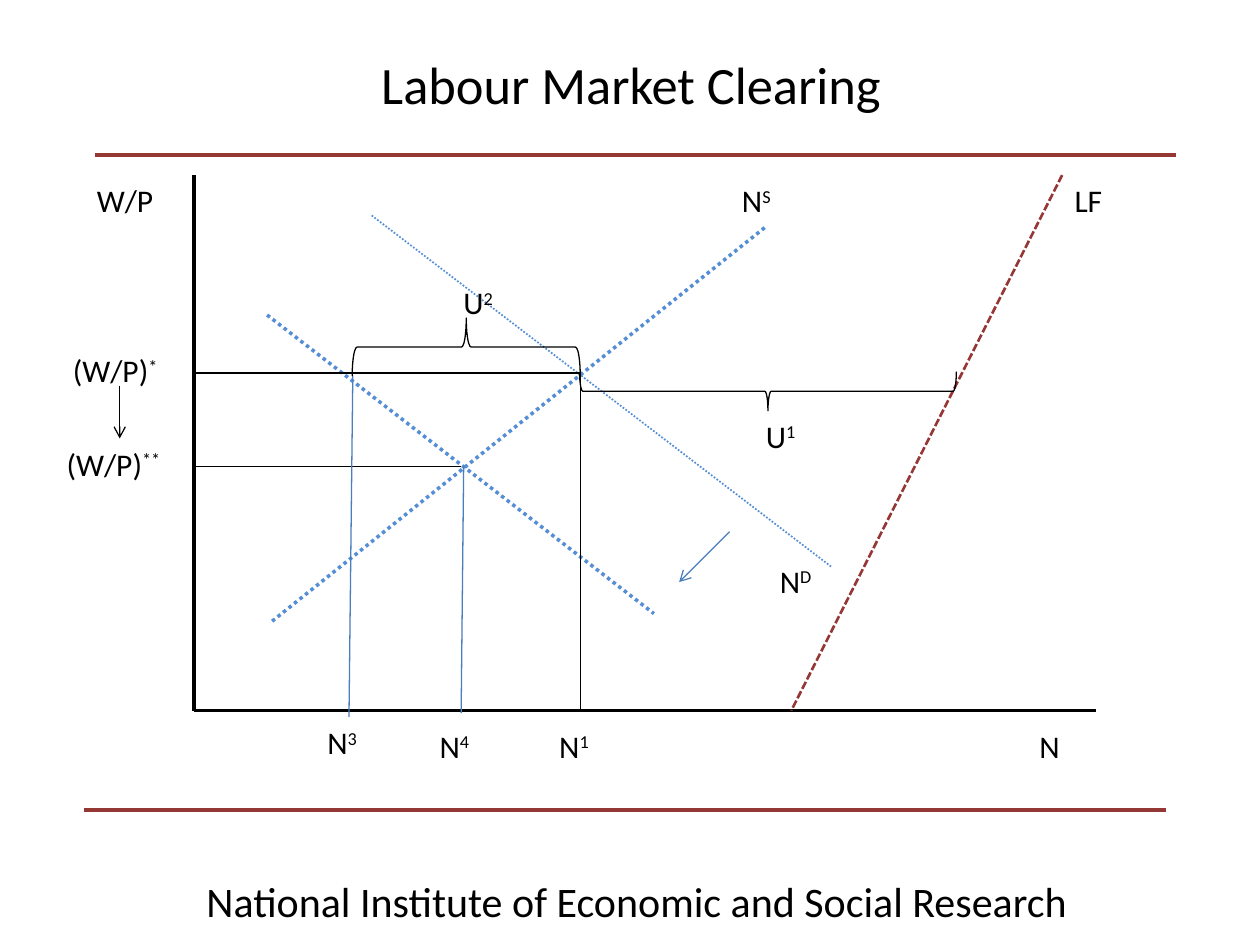
from typing import NamedTuple

import lxml.etree
import pptx
import pptx.dml.color
import pptx.enum.dml
import pptx.enum.shapes
import pptx.enum.text
import pptx.oxml.ns
import pptx.util

PX = pptx.util.Inches(1) // 100
FONT = "Calibri"
BLACK, MAROON, SKY, BLUE = "000000", "953735", "558ED5", "4B7EBC"
DOTTED = pptx.enum.dml.MSO_LINE.ROUND_DOT
DASHED = pptx.enum.dml.MSO_LINE.SQUARE_DOT
LABEL_HEIGHT = 40
AXIS_X, AXIS_TOP, AXIS_Y, AXIS_RIGHT = 154, 139, 564, 870
WAGE_1, WAGE_2 = 296, 370
EMPLOYMENT_1 = 461


class Line(NamedTuple):
    """A straight line, given by its two ends and its stroke."""
    x1: int
    y1: int
    x2: int
    y2: int
    color: str = BLACK
    weight: float = 0.75
    dash: pptx.enum.dml.MSO_LINE | None = None
    arrow: bool = False


class Label(NamedTuple):
    """A short label with an optional superscript."""
    text: str
    superscript: str
    left: int
    top: int
    width: int


class Brace(NamedTuple):
    """A brace, given by its frame before rotation."""
    left: int
    top: int
    width: int
    height: int
    rotation: int


RULES = [
    Line(75, 123, 933, 123, MAROON, 2.25),
    Line(67, 643, 925, 643, MAROON, 2.25),
]
AXES = [
    Line(AXIS_X, AXIS_TOP, AXIS_X, AXIS_Y, weight=1.75),
    Line(AXIS_X, AXIS_Y, AXIS_RIGHT, AXIS_Y, weight=1.75),
]
CURVES = [
    Line(843, AXIS_TOP, 628, AXIS_Y, MAROON, 1.5, DASHED),
    Line(295, 171, 660, 450, SKY, 1, DOTTED),
    Line(212, 250, 519, 487, SKY, 2, DOTTED),
    Line(216, 493, 609, 179, SKY, 2, DOTTED),
]
GUIDES = [
    Line(AXIS_X, WAGE_1, EMPLOYMENT_1, WAGE_1),
    Line(EMPLOYMENT_1, WAGE_1, EMPLOYMENT_1, AXIS_Y),
    Line(366, WAGE_2, AXIS_X, WAGE_2),
    Line(280, 298, 277, 569, BLUE),
    Line(368, WAGE_2, 366, 566, BLUE),
]
SHIFTS = [
    Line(579, 422, 539, 462, BLUE, arrow=True),
    Line(95, 306, 95, 348, arrow=True),
]
BRACES = [Brace(594, 161, 31, 299, 270), Brace(347, 185, 46, 181, 90)]
LABELS = [
    Label("W/P", "", 67, AXIS_TOP, 87),
    Label("N", "S", 579, AXIS_TOP, 118),
    Label("LF", "", 843, AXIS_TOP, 74),
    Label("N", "D", 609, 441, 118),
    Label("(W/P)", "*", 48, 274, 94),
    Label("(W/P)", "**", 43, 348, 99),
    Label("U", "1", 598, 326, 47),
    Label("U", "2", 358, 220, 47),
    Label("N", "3", 250, 569, 54),
    Label("N", "4", 339, 572, 54),
    Label("N", "1", 434, 572, 54),
    Label("N", "", 815, 572, 55),
]


def rgb(color: str) -> pptx.dml.color.RGBColor:
    """Turn a hex string into a colour."""
    return pptx.dml.color.RGBColor.from_string(color)


def add_text(slide, text: str, left: int, top: int, width: int, height: int, *,
             size: int = 18, superscript: str = "", centered: bool = False) -> None:
    """Add a text box with one paragraph."""
    box = slide.shapes.add_textbox(left * PX, top * PX, width * PX, height * PX)
    frame = box.text_frame
    frame.word_wrap = True
    paragraph = frame.paragraphs[0]
    if centered:
        frame.vertical_anchor = pptx.enum.text.MSO_ANCHOR.MIDDLE
        paragraph.alignment = pptx.enum.text.PP_ALIGN.CENTER
    for content, baseline in ((text, 0), (superscript, 30000)):
        if not content:
            continue
        run = paragraph.add_run()
        run.text = content
        run.font.name = FONT
        run.font.size = pptx.util.Pt(size)
        run.font.color.rgb = rgb(BLACK)
        if baseline:
            run.font._element.set("baseline", str(baseline))


def add_line(slide, line: Line) -> None:
    """Draw a straight line, with an open arrowhead if asked."""
    connector = slide.shapes.add_connector(
        pptx.enum.shapes.MSO_CONNECTOR.STRAIGHT,
        line.x1 * PX, line.y1 * PX, line.x2 * PX, line.y2 * PX)
    connector.line.color.rgb = rgb(line.color)
    connector.line.width = pptx.util.Pt(line.weight)
    if line.dash is not None:
        connector.line.dash_style = line.dash
    if line.arrow:
        stroke = connector.line._get_or_add_ln()
        lxml.etree.SubElement(stroke, pptx.oxml.ns.qn("a:tailEnd"), type="arrow")
    lxml.etree.SubElement(connector._element.spPr, pptx.oxml.ns.qn("a:effectLst"))


def add_brace(slide, brace: Brace) -> None:
    """Draw a rotated brace."""
    shape = slide.shapes.add_shape(
        pptx.enum.shapes.MSO_SHAPE.LEFT_BRACE,
        brace.left * PX, brace.top * PX, brace.width * PX, brace.height * PX)
    shape.rotation = brace.rotation
    shape.shadow.inherit = False
    shape.fill.background()
    shape.line.color.rgb = rgb(BLACK)
    shape.line.width = pptx.util.Pt(0.75)


def main() -> None:
    """Build the labour market slide."""
    presentation = pptx.Presentation()
    presentation.slide_width = 1000 * PX
    presentation.slide_height = 750 * PX
    slide = presentation.slides.add_slide(presentation.slide_layouts[6])
    add_text(slide, "Labour Market Clearing", 51, 36, 900, 61, size=30, centered=True)
    add_text(slide, "National Institute of Economic and Social Research",
             154, 690, 795, LABEL_HEIGHT, size=24)
    for line in RULES + AXES + CURVES + GUIDES + SHIFTS:
        add_line(slide, line)
    for brace in BRACES:
        add_brace(slide, brace)
    for label in LABELS:
        add_text(slide, label.text, label.left, label.top, label.width, LABEL_HEIGHT,
                 superscript=label.superscript)
    presentation.save("out.pptx")


if __name__ == "__main__":
    main()
